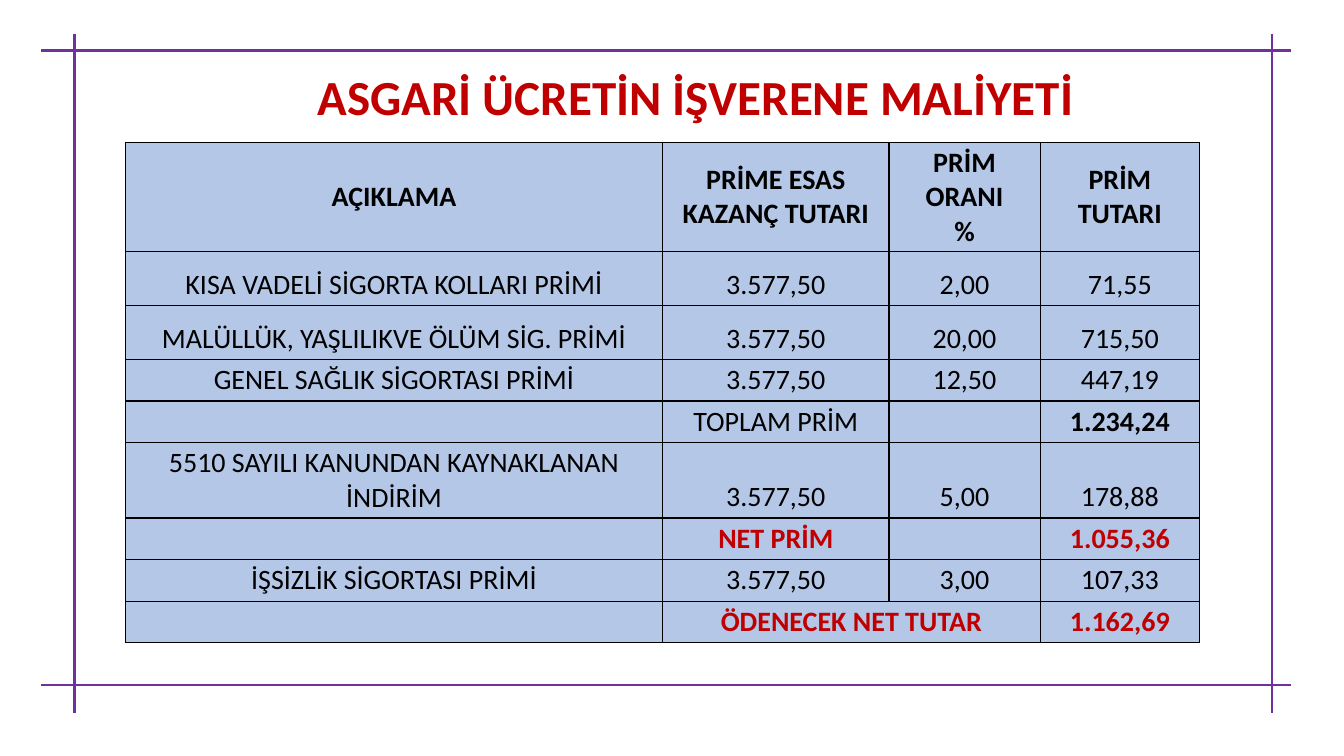
import pptx
import pptx.util
import pptx.dml.color
import pptx.enum.shapes
import pptx.enum.text
import pptx.oxml
import pptx.oxml.ns
import pptx.oxml.xmlchemy

Pt = pptx.util.Pt
COLORS = {"frame": "7030A0", "accent": "C00000", "text": "000000", "cell": "B4C7E7"}
FONT = "Calibri"


def color(name):
    return pptx.dml.color.RGBColor.from_string(COLORS[name])


def add_span(para, text, size, bold, color_name):
    span = para.add_run()
    span.text = text
    span.font.name = FONT
    span.font.size = Pt(size)
    span.font.bold = bold
    span.font.color.rgb = color(color_name)


deck = pptx.Presentation()
deck.slide_width = Pt(960)
deck.slide_height = Pt(540)
page = deck.slides.add_slide(deck.slide_layouts[5])

frame_lines = [
    (29.5, 36, 922.5, 36, 2.25),
    (53.2, 509, 53.2, 24.5, 1.5),
    (908.6, 509, 908.6, 24.5, 1.5),
    (29.5, 489.6, 922.5, 489.6, 1.5),
]
for x1, y1, x2, y2, width in frame_lines:
    line = page.shapes.add_connector(
        pptx.enum.shapes.MSO_CONNECTOR.STRAIGHT, Pt(x1), Pt(y1), Pt(x2), Pt(y2))
    line.line.color.rgb = color("frame")
    line.line.width = Pt(width)
    line._element.spPr.append(pptx.oxml.xmlchemy.OxmlElement("a:effectLst"))

title = page.shapes.title
title.left, title.top, title.width, title.height = Pt(219.6), Pt(43.9), Pt(560.2), Pt(49.7)
box = title.text_frame
box.word_wrap = False
box.auto_size = pptx.enum.text.MSO_AUTO_SIZE.SHAPE_TO_FIT_TEXT
box.vertical_anchor = pptx.enum.text.MSO_ANCHOR.TOP
box.paragraphs[0].alignment = pptx.enum.text.PP_ALIGN.LEFT
add_span(box.paragraphs[0], "ASGARİ ÜCRETİN İŞVERENE MALİYETİ", 35, True, "accent")

rows = [
    ["AÇIKLAMA", "PRİME ESAS KAZANÇ TUTARI", "PRİM ORANI\n%", "PRİM TUTARI"],
    ["KISA VADELİ SİGORTA KOLLARI PRİMİ", "3.577,50", "2,00", "71,55"],
    ["MALÜLLÜK, YAŞLILIKVE ÖLÜM SİG. PRİMİ", "3.577,50", "20,00", "715,50"],
    ["GENEL SAĞLIK SİGORTASI PRİMİ", "3.577,50", "12,50", "447,19"],
    ["", "TOPLAM PRİM", "", "1.234,24"],
    ["5510 SAYILI KANUNDAN KAYNAKLANAN İNDİRİM", "3.577,50", "5,00", "178,88"],
    ["", "NET PRİM", "", "1.055,36"],
    ["İŞSİZLİK SİGORTASI PRİMİ", "3.577,50", "3,00", "107,33"],
    ["", "ÖDENECEK NET TUTAR", "", "1.162,69"],
]
column_widths = [383.8, 161.6, 108, 114]
row_heights = [77.9, 38.7, 38.7, 29.7, 29.7, 53.9, 29.7, 29.7, 29.7]
accent_rows = (6, 8)
bold_cells = [(4, 3)]

table = page.shapes.add_table(
    len(rows), len(column_widths), Pt(89.6), Pt(101.5),
    Pt(sum(column_widths)), Pt(sum(row_heights))).table
for column, width in zip(table.columns, column_widths):
    column.width = Pt(width)
for row, height in zip(table.rows, row_heights):
    row.height = Pt(height)
table.cell(8, 1).merge(table.cell(8, 2))

for r, texts in enumerate(rows):
    for c, text in enumerate(texts):
        cell = table.cell(r, c)
        cell.fill.solid()
        cell.fill.fore_color.rgb = color("cell")
        cell.margin_left = cell.margin_right = Pt(5.4)
        cell.margin_top = cell.margin_bottom = Pt(2.6)
        anchor = pptx.enum.text.MSO_ANCHOR
        cell.vertical_anchor = anchor.MIDDLE if r == 0 else anchor.BOTTOM
        properties = cell._tc.get_or_add_tcPr()
        for i, side in enumerate(("lnL", "lnR", "lnT", "lnB")):
            properties.insert(i, pptx.oxml.parse_xml(
                f'<a:{side} {pptx.oxml.ns.nsdecls("a")} w="12700"><a:solidFill>'
                f'<a:srgbClr val="{COLORS["text"]}"/></a:solidFill></a:{side}>'))
        if not text:
            continue
        bold = r == 0 or r in accent_rows or (r, c) in bold_cells
        for i, part in enumerate(text.split("\n")):
            para = cell.text_frame.add_paragraph() if i else cell.text_frame.paragraphs[0]
            para.alignment = pptx.enum.text.PP_ALIGN.CENTER
            add_span(para, part, 20, bold, "accent" if r in accent_rows else "text")

deck.save("out.pptx")
